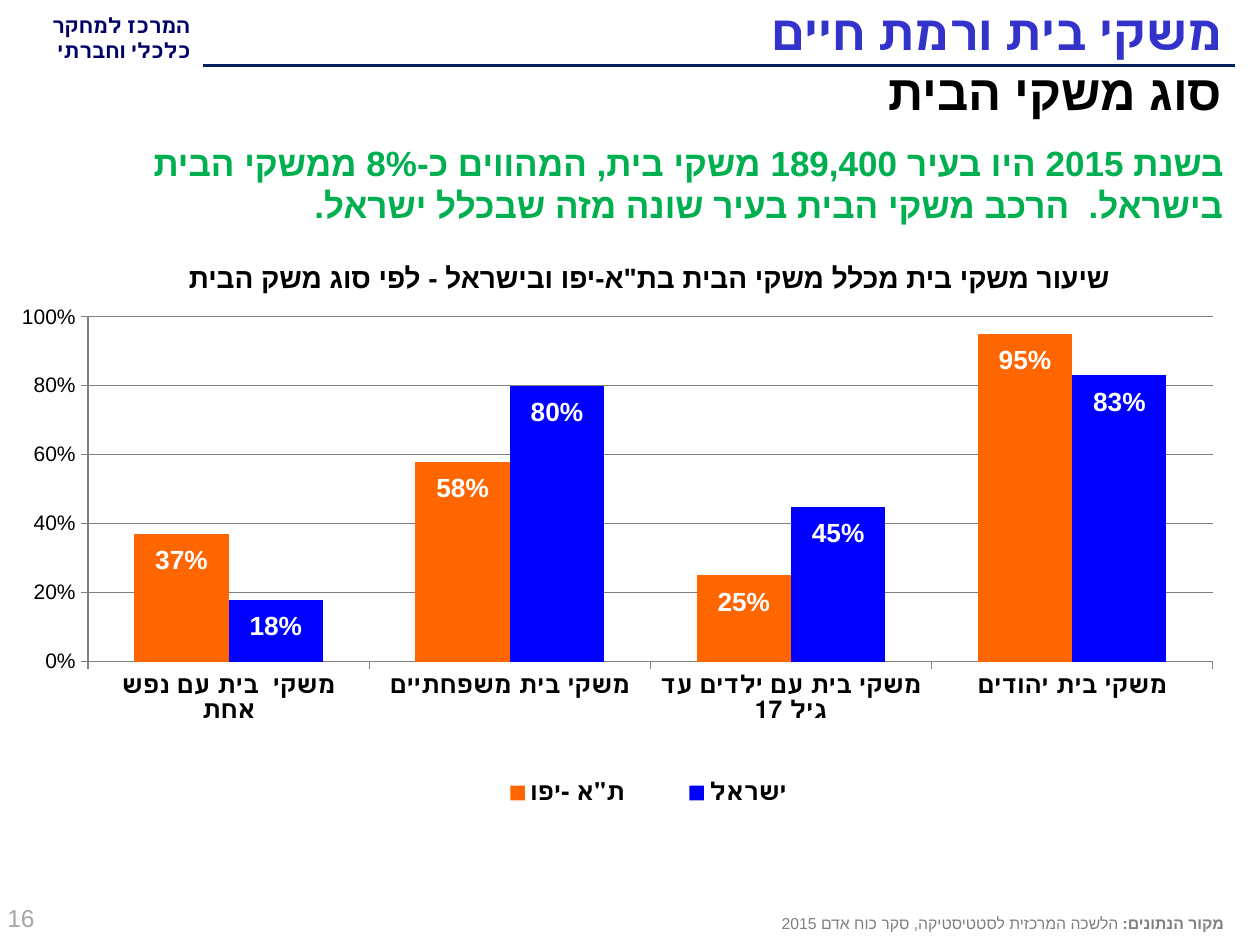
from dataclasses import dataclass

from lxml import etree
from pptx import Presentation
from pptx.chart.data import CategoryChartData
from pptx.dml.color import RGBColor
from pptx.enum.chart import XL_CHART_TYPE, XL_LABEL_POSITION, XL_LEGEND_POSITION, XL_TICK_MARK
from pptx.enum.shapes import MSO_CONNECTOR
from pptx.enum.text import MSO_ANCHOR, PP_ALIGN
from pptx.oxml.ns import qn
from pptx.util import Inches, Pt

LEFT, CENTER, RIGHT = PP_ALIGN.LEFT, PP_ALIGN.CENTER, PP_ALIGN.RIGHT
TOP, MIDDLE = MSO_ANCHOR.TOP, MSO_ANCHOR.MIDDLE
OUTSIDE_END = XL_LABEL_POSITION.OUTSIDE_END


@dataclass(frozen=True)
class Theme:
    navy: str = "000066"
    rule: str = "002060"
    title: str = "3333CC"
    black: str = "000000"
    green: str = "00B050"
    grey: str = "808080"
    light_grey: str = "A6A6A6"
    white: str = "FFFFFF"
    city: str = "FF6600"
    country: str = "0000FF"
    heading_size: int = 28
    message_size: int = 20
    caption_size: int = 16
    label_size: int = 15
    category_size: int = 14
    small_size: int = 12
    source_size: int = 9
    font: str = "Arial"
    brand_font: str = "Lato"


theme = Theme()


def write_hebrew(shape, box, lines, size, color, align=RIGHT, anchor=TOP, font=theme.font):
    """Place a shape and fill it with right-to-left lines of (text, bold) runs."""
    shape.left, shape.top, shape.width, shape.height = (Inches(n) for n in box)
    frame = shape.text_frame
    frame.word_wrap = True
    frame.vertical_anchor = anchor
    for number, runs in enumerate(lines):
        paragraph = frame.add_paragraph() if number else frame.paragraphs[0]
        paragraph.alignment = align
        paragraph.space_before = Pt(0)
        properties = paragraph._p.get_or_add_pPr()
        for name, value in (("rtl", "1"), ("marL", "0"), ("indent", "0")):
            properties.set(name, value)
        etree.SubElement(properties, qn("a:buNone"))
        for text, bold in runs:
            run = paragraph.add_run()
            run.text = text
            run.font.size = Pt(size)
            run.font.bold = bold
            run.font.name = font
            run.font.color.rgb = RGBColor.from_string(color)
            etree.SubElement(run._r.get_or_add_rPr(), qn("a:cs")).set("typeface", font)


def manual_layout(**settings):
    layout = etree.Element(qn("c:layout"))
    manual = etree.SubElement(layout, qn("c:manualLayout"))
    for name, value in settings.items():
        etree.SubElement(manual, qn(f"c:{name}")).set("val", str(value))
    return layout


prs = Presentation()
prs.slide_width, prs.slide_height = Inches(10), Inches(7.5)
slide = prs.slides.add_slide(prs.slide_layouts[1])
shapes = slide.shapes

# Header
write_hebrew(shapes.add_textbox(0, 0, 0, 0), (0, 0.05, 1.61, 0.51),
             [[("המרכז למחקר", True)], [("כלכלי וחברתי", True)]],
             theme.small_size, theme.navy, font=theme.brand_font)
header_rule = shapes.add_connector(MSO_CONNECTOR.STRAIGHT, Inches(1.61), Inches(0.52),
                                   Inches(9.8), Inches(0.52))
header_rule.line.color.rgb = RGBColor.from_string(theme.rule)
header_rule.line.width = Pt(2.25)
etree.SubElement(header_rule._element.spPr, qn("a:effectLst"))
write_hebrew(shapes.title, (1.58, -0.03, 8.22, 0.55), [[("משקי בית ורמת חיים", True)]],
             theme.heading_size, theme.title, anchor=MIDDLE, font=theme.brand_font)
write_hebrew(slide.placeholders[1], (0.09, 0.44, 9.71, 0.6), [[("סוג משקי הבית", True)]],
             theme.heading_size, theme.black)

# Household types chart
data = CategoryChartData(number_format="0%")
data.categories = ["משקי  בית עם נפש אחת", "משקי בית משפחתיים",
                   "משקי בית עם ילדים עד גיל 17", "משקי בית יהודים"]
data.add_series('ת"א -יפו', (0.37, 0.58, 0.25, 0.95))
data.add_series("ישראל", (0.18, 0.8, 0.45, 0.83))
chart = shapes.add_chart(XL_CHART_TYPE.COLUMN_CLUSTERED, Inches(0.13), Inches(2.41),
                         Inches(9.65), Inches(4.57), data).chart
chart.has_title = False
chart.font.name = theme.font
chart.font.size = Pt(theme.small_size)
chart.font.color.rgb = RGBColor.from_string(theme.black)

plot = chart.plots[0]
plot.gap_width = 98
plot.overlap = 0
plot.vary_by_categories = False
plot_area = chart._chartSpace.chart.plotArea
for automatic in plot_area.findall(qn("c:layout")):
    plot_area.remove(automatic)
plot_area.insert(0, manual_layout(layoutTarget="inner", xMode="edge", yMode="edge",
                                  x=0.059, y=0.023, w=0.925, h=0.599))

for series, color in zip(plot.series, (theme.city, theme.country)):
    series.format.fill.solid()
    series.format.fill.fore_color.rgb = RGBColor.from_string(color)
    for index in range(len(data.categories)):
        label = series.points[index].data_label
        label.font.size = Pt(theme.label_size)
        label.font.bold = True
        label.font.color.rgb = RGBColor.from_string(theme.white)
        label.position = OUTSIDE_END
    for label_xml in series._element.iter(qn("c:dLbl")):
        label_xml.insert(1, manual_layout(x=0, y=0.08))

value_axis, category_axis = chart.value_axis, chart.category_axis
value_axis.minimum_scale, value_axis.maximum_scale, value_axis.major_unit = 0, 1, 0.2
value_axis.tick_labels.number_format = "0%"
value_axis.tick_labels.number_format_is_linked = False
value_axis.has_major_gridlines = True
category_axis.tick_labels.font.size = Pt(theme.category_size)
category_axis.tick_labels.font.bold = True
for axis in (value_axis, category_axis):
    axis.major_tick_mark = XL_TICK_MARK.OUTSIDE
for line in (value_axis.format.line, category_axis.format.line,
             value_axis.major_gridlines.format.line):
    line.color.rgb = RGBColor.from_string(theme.grey)
    line.width = Pt(0.75)

chart.has_legend = True
legend = chart.legend
legend.position = XL_LEGEND_POSITION.BOTTOM
legend.include_in_layout = False
legend.font.size = Pt(theme.category_size)
legend.font.bold = True
for automatic in legend._element.findall(qn("c:layout")):
    legend._element.remove(automatic)
legend._element.find(qn("c:legendPos")).addnext(
    manual_layout(xMode="edge", yMode="edge", x=0.36, y=0.82, w=0.32, h=0.06))

# Caption, message and footer
write_hebrew(shapes.add_textbox(0, 0, 0, 0), (1.14, 2.02, 8.03, 0.37),
             [[('שיעור משקי בית מכלל משקי הבית בת"א-יפו ובישראל - לפי סוג משק הבית', True)]],
             theme.caption_size, theme.black, CENTER)
write_hebrew(shapes.add_textbox(0, 0, 0, 0), (0.1, 1.07, 9.71, 0.79),
             [[("בשנת 2015 היו בעיר 189,400 משקי בית, המהווים כ-8% ממשקי הבית בישראל.  "
                "הרכב משקי הבית בעיר שונה מזה שבכלל ישראל.", True)]],
             theme.message_size, theme.green)
write_hebrew(shapes.add_textbox(0, 0, 0, 0), (-0.04, 7.06, 2.33, 0.44), [[("16", False)]],
             theme.category_size, theme.light_grey, LEFT, MIDDLE)
write_hebrew(shapes.add_textbox(0, 0, 0, 0), (2.88, 7.2, 6.93, 0.25),
             [[("מקור הנתונים: ", True),
               ("הלשכה המרכזית לסטטיסטיקה, סקר כוח אדם 2015", False)]],
             theme.source_size, theme.grey)

prs.save("out.pptx")
